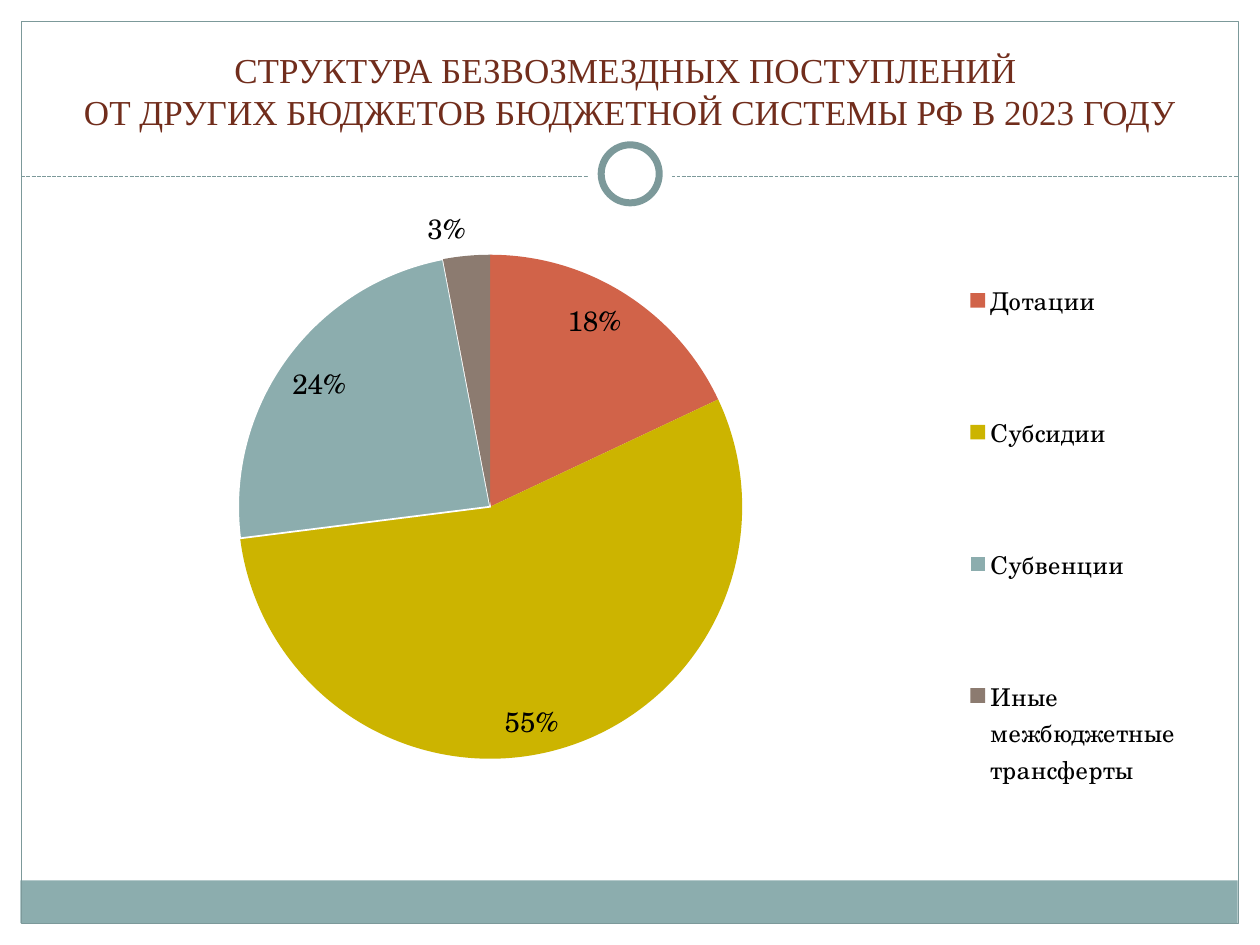
from dataclasses import dataclass
from lxml.etree import SubElement
from pptx import Presentation
from pptx.chart.data import CategoryChartData
from pptx.dml.color import RGBColor
from pptx.enum.chart import XL_CHART_TYPE, XL_LABEL_POSITION, XL_LEGEND_POSITION
from pptx.enum.dml import MSO_LINE
from pptx.enum.shapes import MSO_CONNECTOR, MSO_SHAPE
from pptx.enum.text import MSO_ANCHOR, PP_ALIGN
from pptx.oxml import parse_xml
from pptx.oxml.ns import nsdecls, qn
from pptx.slide import Slide
from pptx.util import Cm, Pt

HUES = {
    "white": "FFFFFF",
    "black": "000000",
    "band": "8CADAE",
    "edge": "7C999A",
    "title": "712D1C",
    "coral": "D16349",
    "gold": "CCB400",
    "taupe": "8C7B70",
}


def hue(name):
    return RGBColor.from_string(HUES[name])


def place(node, index, box, inner=False):
    for old in node.findall(qn("c:layout")):
        node.remove(old)
    layout = parse_xml(f"<c:layout {nsdecls('c')}><c:manualLayout/></c:layout>")
    rules = [("layoutTarget", "inner")] if inner else []
    rules += [("xMode", "edge"), ("yMode", "edge"), *zip("xywh", box)]
    for tag, val in rules:
        SubElement(layout[0], qn(f"c:{tag}")).set("val", str(val))
    node.insert(index, layout)


@dataclass
class Deck:
    slide: Slide
    serif: str = "Times New Roman"
    school: str = "TeX Gyre Schola"

    def shape(self, kind, box, fill=None, edge=None, width=0.75):
        item = self.slide.shapes.add_shape(kind, *map(Cm, box))
        item.shadow.inherit = False
        if fill:
            item.fill.solid()
            item.fill.fore_color.rgb = hue(fill)
        else:
            item.fill.background()
        if edge:
            item.line.color.rgb = hue(edge)
            item.line.width = Pt(width)
        else:
            item.line.fill.background()

    def rule(self, left, right, top):
        line = self.slide.shapes.add_connector(
            MSO_CONNECTOR.STRAIGHT, Cm(left), Cm(top), Cm(right), Cm(top))
        line.line.color.rgb = hue("edge")
        line.line.width = Pt(0.75)
        line.line.dash_style = MSO_LINE.SQUARE_DOT
        SubElement(line._element.spPr, qn("a:effectLst"))

    def title(self, box, lines):
        frame = self.slide.shapes.add_textbox(*map(Cm, box)).text_frame
        frame.word_wrap = True
        frame.vertical_anchor = MSO_ANCHOR.BOTTOM
        para = frame.paragraphs[0]
        para.alignment = PP_ALIGN.CENTER
        for row, text in enumerate(lines):
            if row:
                para.add_line_break()
            run = para.add_run()
            run.text = text
            self.font(run.font, 20, "title", self.serif)

    def font(self, font, size, color="black", name=None):
        font.size = Pt(size)
        font.name = name or self.school
        font.color.rgb = hue(color)

    def pie(self, box, parts):
        data = CategoryChartData()
        data.categories = [name for name, *_ in parts]
        data.add_series("Series 1", [val for _, val, *_ in parts])
        chart = self.slide.shapes.add_chart(
            XL_CHART_TYPE.PIE, *map(Cm, box), data).chart
        chart.has_title = False
        self.font(chart.font, 12)
        chart.has_legend = True
        key = chart.legend
        key.position = XL_LEGEND_POSITION.TOP
        key.include_in_layout = False
        self.font(key.font, 14)
        place(key._element, 1, (0.77, 0.016, 0.192, 0.934))
        area = chart._chartSpace.chart.plotArea
        place(area, 0, (0.009, 0.107, 0.751, 0.677), inner=True)
        plot = chart.plots[0]
        plot.vary_by_categories = True
        for index, (_, _, color, edge, spot) in enumerate(parts):
            point = plot.series[0].points[index]
            point.format.fill.solid()
            point.format.fill.fore_color.rgb = hue(color)
            if edge:
                point.format.line.color.rgb = hue(edge)
                point.format.line.width = Pt(1)
            else:
                point.format.line.fill.background()
            label = point.data_label
            self.font(label.font, 16)
            label.position = spot
        for tag, val in (("showVal", "0"), ("showPercent", "1")):
            for node in area.iter(qn(f"c:{tag}")):
                node.set("val", val)


def main():
    show = Presentation()
    show.slide_width, show.slide_height = Cm(25.4), Cm(19.05)
    deck = Deck(show.slides.add_slide(show.slide_layouts[6]))
    deck.shape(MSO_SHAPE.RECTANGLE, (0.41, 17.75, 24.54, 0.86), "band")
    deck.shape(MSO_SHAPE.RECTANGLE, (0.43, 0.43, 24.54, 18.19), edge="edge")
    deck.rule(0.43, 24.97, 3.56)
    deck.shape(MSO_SHAPE.OVAL, (11.85, 2.67, 1.7, 1.7), "white")
    deck.shape(MSO_SHAPE.OVAL, (12.12, 2.92, 1.17, 1.17), "white", "edge", 4)
    deck.title((0.5, 0.53, 24.4, 2.27), [
        "СТРУКТУРА БЕЗВОЗМЕЗДНЫХ ПОСТУПЛЕНИЙ ",
        "ОТ ДРУГИХ БЮДЖЕТОВ БЮДЖЕТНОЙ СИСТЕМЫ РФ В 2023 ГОДУ",
    ])
    inner, outer = XL_LABEL_POSITION.INSIDE_END, XL_LABEL_POSITION.OUTSIDE_END
    deck.pie((0.5, 3.53, 24.4, 15.01), [
        ("Дотации", 18, "coral", None, inner),
        ("Субсидии", 55, "gold", None, inner),
        ("Субвенции", 24, "band", "white", inner),
        ("Иные межбюджетные трансферты", 3, "taupe", None, outer),
    ])
    show.save("out.pptx")


if __name__ == "__main__":
    main()
